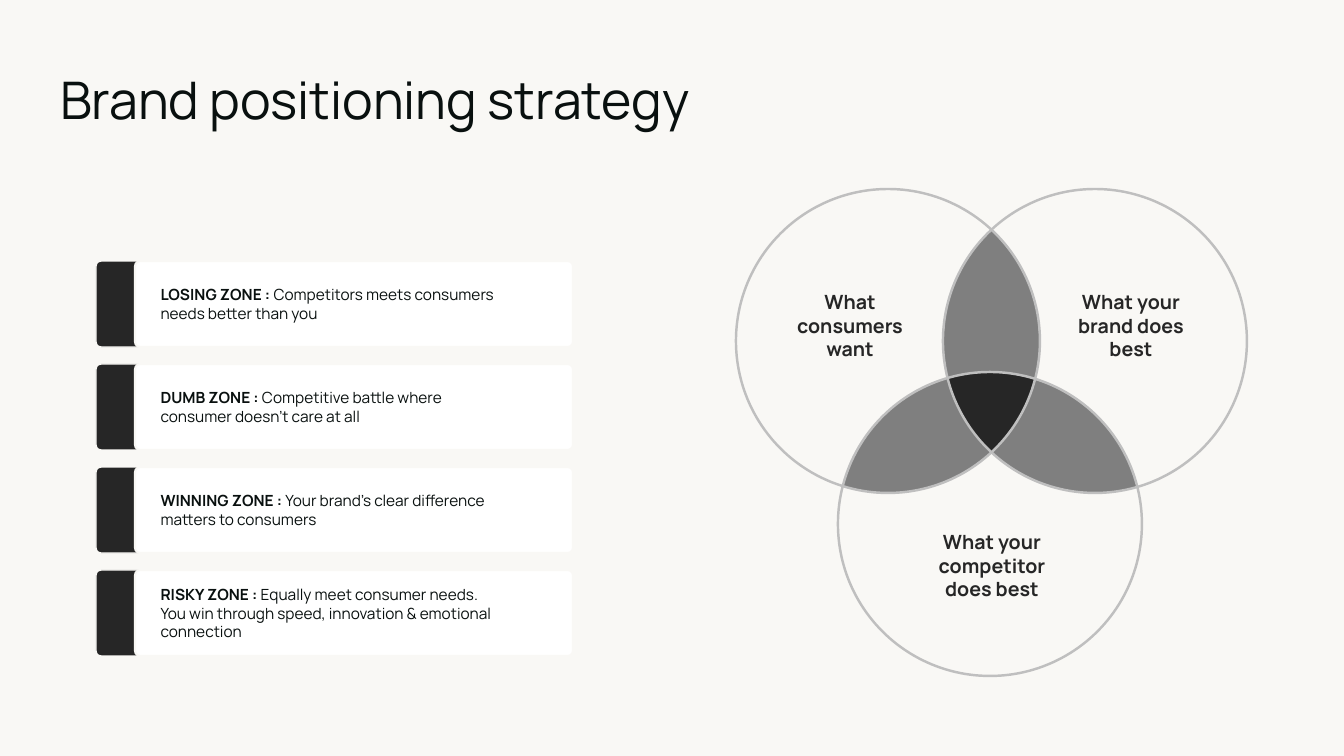
import math

import pptx
import pptx.util
import pptx.dml.color
import pptx.enum.shapes
import pptx.enum.text

PX = 914400 / 100.8
INK, DARK, GREY, RING, PAPER = "09100F", "262626", "7F7F7F", "BFBFBF", "F9F8F5"
SHAPE = pptx.enum.shapes.MSO_SHAPE
ALIGN = pptx.enum.text.PP_ALIGN
ANCHOR = pptx.enum.text.MSO_ANCHOR


def box(*lengths):
    return [pptx.util.Emu(round(v * PX)) for v in lengths]


def rgb(code):
    return pptx.dml.color.RGBColor.from_string(code)


prs = pptx.Presentation()
prs.slide_width, prs.slide_height = box(1344, 756)
s = prs.slides.add_slide(prs.slide_layouts[5])
s.background.fill.solid()
s.background.fill.fore_color.rgb = rgb(PAPER)

# Title
title = s.shapes.title
title.left, title.top, title.width, title.height = box(60, 68, 1240, 69)
tf = title.text_frame
tf.text = "Brand positioning strategy"
tf.margin_left = tf.margin_top = tf.margin_right = tf.margin_bottom = 0
tf.vertical_anchor = ANCHOR.TOP
tf.auto_size = pptx.enum.text.MSO_AUTO_SIZE.NONE
p = tf.paragraphs[0]
p.alignment = ALIGN.LEFT
p.space_before, p.space_after = pptx.util.Pt(0), pptx.util.Pt(13)
font = p.runs[0].font
font.name, font.size, font.color.rgb = "Manrope", pptx.util.Pt(37), rgb(INK)

# Zone cards: a dark card peeks out behind each white one
cards = []
for x, fill, weight in ((96, DARK, 1), (135, "FFFFFF", 1.5)):
    for i in range(4):
        sp = s.shapes.add_shape(SHAPE.ROUNDED_RECTANGLE, *box(x, 261 + 103 * i, 438, 86))
        sp.adjustments[0] = 0.06
        sp.shadow.inherit = False
        sp.fill.solid()
        sp.fill.fore_color.rgb = rgb(fill)
        sp.line.color.rgb = rgb(PAPER)
        sp.line.width = pptx.util.Pt(weight)
        cards.append(sp)

# Zone texts: the last one breaks its line inside a single paragraph
zones = [
    ("LOSING ZONE : ", "Competitors meets consumers", "needs better than you"),
    ("DUMB ZONE : ", "Competitive battle where", "consumer doesn’t care at all"),
    ("WINNING ZONE : ", "Your brand’s clear difference", "matters to consumers"),
    ("RISKY ZONE : ", "Equally meet consumer needs. ",
     "You win through speed, innovation & emotional connection"),
]
for sp, (label, first, second) in zip(cards[4:], zones):
    tf = sp.text_frame
    tf.word_wrap = True
    tf.vertical_anchor = ANCHOR.MIDDLE
    tf.margin_left, tf.margin_top, tf.margin_right, tf.margin_bottom = box(24, 5, 12, 5)
    tf.text = label
    p = tf.paragraphs[0]
    p.add_run().text = first
    if sp is cards[-1]:
        p.add_line_break()
    else:
        p = tf.add_paragraph()
    p.add_run().text = second
    for p in tf.paragraphs:
        p.alignment = ALIGN.LEFT
        for r in p.runs:
            r.font.name, r.font.size = "Manrope", pptx.util.Pt(11)
            r.font.color.rgb = rgb(INK)
            r.font.bold = r.text == label

# Venn geometry: three equal circles, clockwise from the left one
RADIUS = 152
circles = [(888, 341), (1095, 341), (990, 524)]
crossings = {}  # (a, b) clockwise is the outer crossing, (b, a) the inner one
for a in range(3):
    for b in range(3):
        if a != b:
            (ax, ay), (bx, by) = circles[a], circles[b]
            d = math.dist(circles[a], circles[b])
            h = math.sqrt(RADIUS ** 2 - d ** 2 / 4) / d
            crossings[a, b] = ((ax + bx) / 2 + h * (by - ay), (ay + by) / 2 - h * (bx - ax))

# Each region is bounded by arcs: circle, start crossing, end crossing
regions = []
for a in range(3):
    b, c = (a + 1) % 3, (a + 2) % 3
    regions.append((GREY, [(a, (a, b), (a, c)), (c, (a, c), (c, b)), (b, (c, b), (a, b))]))
regions.append((DARK, [(0, (1, 0), (0, 2)), (2, (0, 2), (2, 1)), (1, (2, 1), (1, 0))]))

# Overlap regions, whose short chords stay under the circle outlines
for fill, arcs in regions:
    points = []
    for circle, start, end in arcs:
        cx, cy = circles[circle]
        t0, t1 = [math.atan2(crossings[k][1] - cy, crossings[k][0] - cx) for k in (start, end)]
        sweep = math.remainder(t1 - t0, math.tau)
        steps = math.ceil(abs(sweep) / 0.22)
        for n in range(steps):
            t = t0 + sweep * n / steps
            points.append(box(cx + RADIUS * math.cos(t), cy + RADIUS * math.sin(t)))
    builder = s.shapes.build_freeform(*points[0])
    builder.add_line_segments(points[1:], close=True)
    sp = builder.convert_to_shape()
    sp.shadow.inherit = False
    sp.fill.solid()
    sp.fill.fore_color.rgb = rgb(fill)
    sp.line.fill.background()

# Circle labels
labels = [
    ("What consumers want", 766, 285, 168),
    ("What your brand does best", 1062, 285, 138),
    ("What your competitor does best", 919, 525, 146),
]
for text, x, y, w in labels:
    tf = s.shapes.add_textbox(*box(x, y, w, 82)).text_frame
    tf.word_wrap = True
    tf.text = text
    p = tf.paragraphs[0]
    p.alignment = ALIGN.CENTER
    font = p.runs[0].font
    font.name, font.size, font.bold = "Manrope", pptx.util.Pt(14), True
    font.color.rgb = rgb(DARK)

# Circle outlines
for cx, cy in reversed(circles):
    sp = s.shapes.add_shape(
        SHAPE.OVAL, *box(cx - RADIUS, cy - RADIUS, 2 * RADIUS, 2 * RADIUS))
    sp.shadow.inherit = False
    sp.fill.background()
    sp.line.color.rgb = rgb(RING)
    sp.line.width = pptx.util.Pt(1.75)

prs.save("out.pptx")
